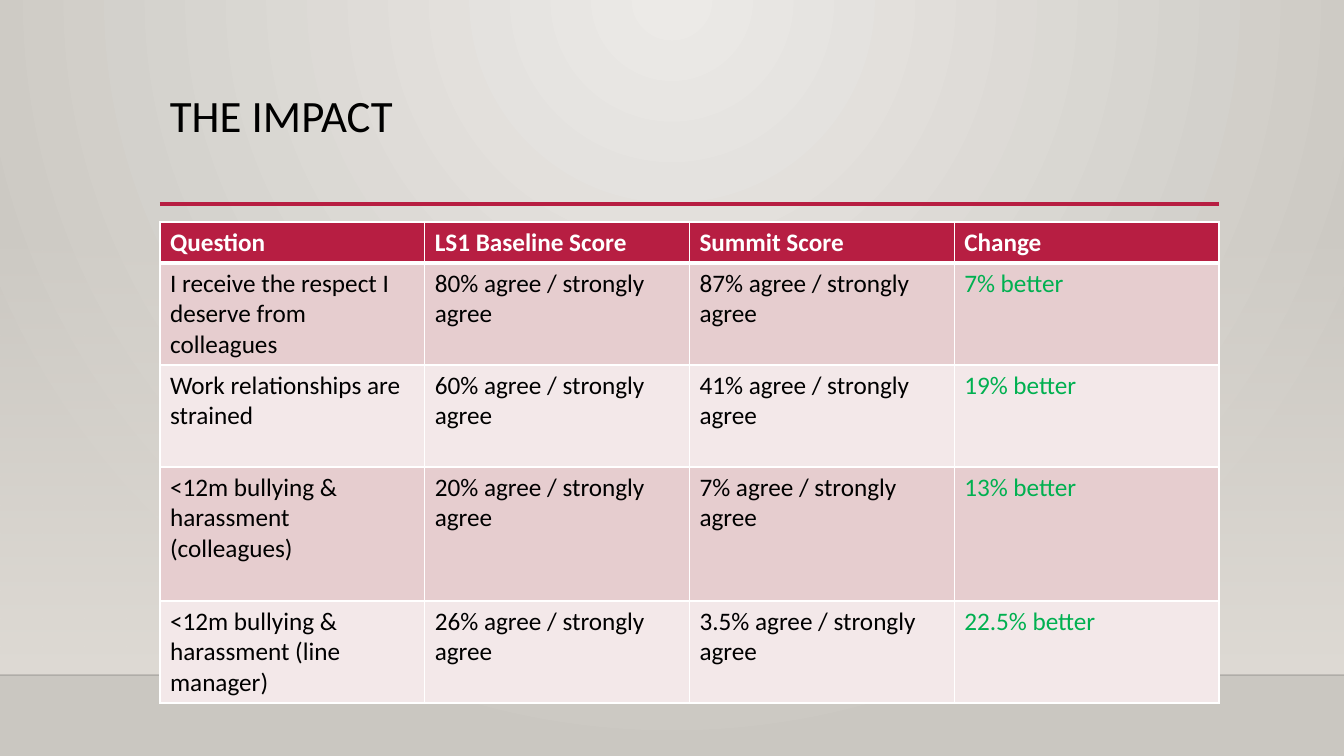
from pptx import Presentation
from pptx.dml.color import RGBColor
from pptx.enum.shapes import MSO_CONNECTOR, MSO_SHAPE
from pptx.enum.text import MSO_ANCHOR
from pptx.oxml import parse_xml
from pptx.oxml.ns import nsdecls, qn
from pptx.util import Pt
from lxml.etree import SubElement

PX = 914400 / 100.8
WIDTH, HEIGHT = 1344, 756
FONT = "Calibri"
RED, WHITE, BLACK, GREEN = "B71E42", "FFFFFF", "000000", "00B050"
BANDS = ["E6CDCF", "F3E8E9"]
ROW_HEIGHTS = [41, 102, 102, 134, 102]
ROWS = [
    ["Question", "LS1 Baseline Score", "Summit Score", "Change"],
    ["I receive the respect I deserve from colleagues",
     "80% agree / strongly agree", "87% agree / strongly agree", "7% better"],
    ["Work relationships are strained",
     "60% agree / strongly agree", "41% agree / strongly agree", "19% better"],
    ["<12m bullying & harassment (colleagues)",
     "20% agree / strongly agree", "7% agree / strongly agree", "13% better"],
    ["<12m bullying & harassment (line manager)",
     "26% agree / strongly agree", "3.5% agree / strongly agree", "22.5% better"],
]


def px(n):
    return round(n * PX)


def rgb(color):
    return RGBColor.from_string(color)


def set_font(p, size, color, bold=False):
    for r in p.runs:
        r.font.name = FONT
        r.font.size = Pt(size)
        r.font.bold = bold
        r.font.color.rgb = rgb(color)


def set_gradient(fill, start, end):
    fill.gradient()
    for stop, color, position in zip(fill.gradient_stops, (start, end), (0, 1)):
        stop.color.rgb = rgb(color)
        stop.position = position


def set_alpha(color_element, percent):
    SubElement(color_element, qn("a:alpha"), val=str(percent * 1000))


def add_rule(s, x, y, width, color, weight):
    line = s.shapes.add_connector(
        MSO_CONNECTOR.STRAIGHT, px(x), px(y), px(x + width), px(y))
    line.line.color.rgb = rgb(color)
    line.line.width = Pt(weight)
    SubElement(line.element.spPr, qn("a:effectLst"))
    return line


def add_backdrop(s, x, y, width, height):
    # Radial glow from the top centre
    set_gradient(s.background.fill, "ECEAE7", "CAC7C1")
    glow = s.element.find(".//" + qn("a:gradFill"))
    glow.replace(glow.find(qn("a:lin")), parse_xml(
        f'<a:path {nsdecls("a")} path="circle">'
        '<a:fillToRect l="43000" t="0" r="43000" b="100000"/></a:path>'))

    # Wall that fades in down to the floor line
    floor = y + height
    wall = s.shapes.add_shape(
        MSO_SHAPE.RECTANGLE, px(x), px(y), px(width), px(height))
    wall.shadow.inherit = False
    wall.line.fill.background()
    set_gradient(wall.fill, "DFDBD5", "DFDBD5")
    wall.fill.gradient_angle = 270
    set_alpha(wall.element.spPr.find(".//" + qn("a:srgbClr")), 0)

    edge = add_rule(s, x, floor, width, "000001", 1)
    set_alpha(edge.element.spPr.find(".//" + qn("a:srgbClr")), 20)


def add_title(s, x, y, width, height):
    add_rule(s, x, y + height, width, RED, 2.5)
    tf = s.shapes.add_textbox(px(x), px(y), px(width), px(height)).text_frame
    tf.word_wrap = True
    tf.vertical_anchor = MSO_ANCHOR.TOP
    tf.text = "THE IMPACT"
    p = tf.paragraphs[0]
    p.line_spacing = 0.9
    set_font(p, 32, BLACK)


def set_borders(cell, top, bottom):
    tcPr = cell._tc.get_or_add_tcPr()
    weights = {"lnL": 1, "lnR": 1, "lnT": top, "lnB": bottom}
    for i, (side, weight) in enumerate(weights.items()):
        tcPr.insert(i, parse_xml(
            f'<a:{side} {nsdecls("a")} w="{Pt(weight)}"><a:solidFill>'
            f'<a:srgbClr val="{WHITE}"/></a:solidFill></a:{side}>'))


def add_scores(s, x, y, width):
    table = s.shapes.add_table(
        len(ROWS), len(ROWS[0]), px(x), px(y), px(width),
        px(sum(ROW_HEIGHTS))).table
    table.first_row = table.horz_banding = False
    for i, (height, texts) in enumerate(zip(ROW_HEIGHTS, ROWS)):
        table.rows[i].height = px(height)
        header = i == 0
        for j, text in enumerate(texts):
            cell = table.cell(i, j)
            cell.text = text
            cell.fill.solid()
            cell.fill.fore_color.rgb = rgb(RED if header else BANDS[(i - 1) % 2])
            # The heavy border lies between the header and the first row
            set_borders(cell, 3 if i == 1 else 1, 3 if header else 1)
            body = GREEN if j == len(texts) - 1 else BLACK
            set_font(cell.text_frame.paragraphs[0], 18,
                     WHITE if header else body, header)


def main():
    prs = Presentation()
    prs.slide_width, prs.slide_height = px(WIDTH), px(HEIGHT)
    s = prs.slides.add_slide(prs.slide_layouts[6])
    add_backdrop(s, 0, 223, WIDTH, 452)
    add_title(s, 160, 89, 1059, 115)
    add_scores(s, 160, 222, 1059)
    prs.save("out.pptx")


if __name__ == "__main__":
    main()
